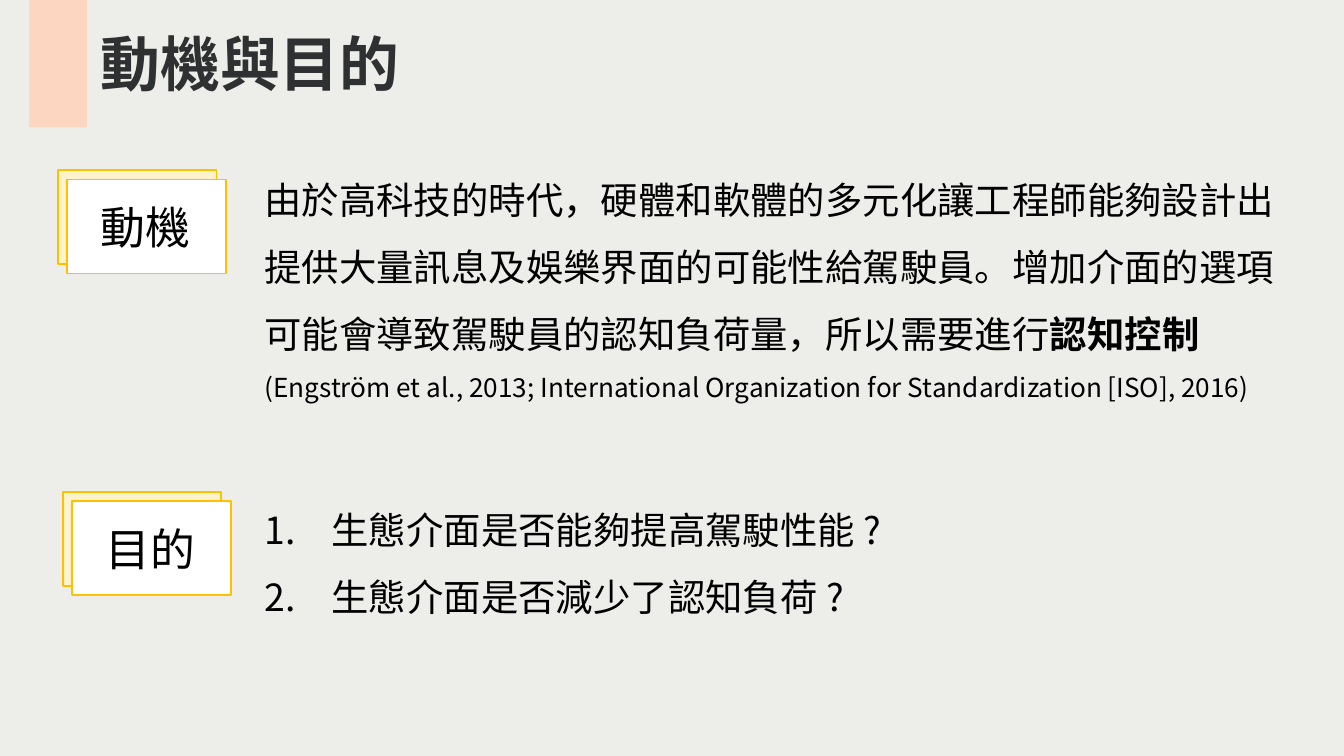
from dataclasses import dataclass

from lxml import etree
from pptx import Presentation
from pptx.dml.color import RGBColor
from pptx.enum import shapes, text
from pptx.oxml import ns
from pptx.util import Pt

FONT = "Noto Sans CJK SC"
COLORS = {
    "background": "EDEEE9",
    "accent": "FCD6C1",
    "title": "2E3032",
    "body": "000000",
    "card_back": "FFF2CC",
    "card_front": "FFFFFF",
    "card_line": "FFC000",
}


@dataclass(frozen=True)
class Box:
    left: float
    top: float
    width: float
    height: float


@dataclass(frozen=True)
class Run:
    words: str
    size: float
    bold: bool = False
    color: str = "body"


@dataclass(frozen=True)
class Tag:
    words: str
    left: float
    top: float


def rgb(color: str) -> RGBColor:
    return RGBColor.from_string(COLORS[color])


def add_panel(parent, box: Box, fill: str, line: str | None = None) -> None:
    panel = parent.add_shape(
        shapes.MSO_SHAPE.RECTANGLE,
        Pt(box.left), Pt(box.top), Pt(box.width), Pt(box.height),
    )
    panel.shadow.inherit = False
    panel.fill.solid()
    panel.fill.fore_color.rgb = rgb(fill)
    if line:
        panel.line.color.rgb = rgb(line)
        panel.line.width = Pt(1)
    else:
        panel.line.fill.background()


def add_words(
    parent,
    box: Box,
    paragraphs: list[list[Run]],
    wrap: bool = False,
    spacing: float | None = None,
    numbered: bool = False,
) -> None:
    frame = parent.add_textbox(
        Pt(box.left), Pt(box.top), Pt(box.width), Pt(box.height)
    ).text_frame
    frame.word_wrap = wrap
    frame.auto_size = text.MSO_AUTO_SIZE.SHAPE_TO_FIT_TEXT
    for index, runs in enumerate(paragraphs):
        paragraph = frame.add_paragraph() if index else frame.paragraphs[0]
        if spacing:
            paragraph.line_spacing = spacing
        if numbered:
            number_paragraph(paragraph, Pt(36))
        for part in runs:
            run = paragraph.add_run()
            run.text = part.words
            run.font.size = Pt(part.size)
            run.font.bold = part.bold
            run.font.color.rgb = rgb(part.color)
            run.font.name = FONT
            east_asian = etree.SubElement(run.font._element, ns.qn("a:ea"))
            east_asian.set("typeface", FONT)


def number_paragraph(paragraph, indent: int) -> None:
    properties = paragraph._p.get_or_add_pPr()
    properties.set("marL", str(indent))
    properties.set("indent", str(-indent))
    bullet_font = etree.SubElement(properties, ns.qn("a:buFont"))
    bullet_font.set("typeface", FONT)
    numbering = etree.SubElement(properties, ns.qn("a:buAutoNum"))
    numbering.set("type", "arabicPeriod")


def add_tag(slide, tag: Tag) -> None:
    members = slide.shapes.add_group_shape().shapes
    for offset, fill in ((0, "card_back"), (5, "card_front")):
        card = Box(tag.left + offset, tag.top + offset, 85, 50.4)
        add_panel(members, card, fill, "card_line")
    label = Box(tag.left + 15.8, tag.top + 12.3, 63.4, 36)
    add_words(members, label, [[Run(tag.words, 24)]])


def main() -> None:
    deck = Presentation()
    deck.slide_width, deck.slide_height = Pt(720), Pt(405)
    slide = deck.slides.add_slide(deck.slide_layouts[6])
    slide.background.fill.solid()
    slide.background.fill.fore_color.rgb = rgb("background")

    add_panel(slide.shapes, Box(15.6, 0, 31, 68.2), "accent")
    add_words(
        slide.shapes, Box(46.8, 10.8, 176.4, 46),
        [[Run("動機與目的", 32, True, "title")]],
    )

    for tag in (Tag("動機", 31, 91.2), Tag("目的", 33.6, 263.6)):
        add_tag(slide, tag)

    motive = [
        Run(
            "由於高科技的時代，硬體和軟體的多元化讓工程師能夠設計出"
            "提供大量訊息及娛樂界面的可能性給駕駛員。增加介面的選項"
            "可能會導致駕駛員的認知負荷量，所以需要進行", 20,
        ),
        Run("認知控制 ", 20, True),
        Run(
            "(Engström et al., 2013; International Organization for "
            "Standardization [ISO], 2016)", 14,
        ),
    ]
    add_words(
        slide.shapes, Box(134.6, 79.2, 573.8, 139), [motive],
        wrap=True, spacing=1.5,
    )

    questions = ("生態介面是否能夠提高駕駛性能 ?", "生態介面是否減少了認知負荷 ?")
    add_words(
        slide.shapes, Box(134.6, 256.3, 348.5, 75.6),
        [[Run(question, 20)] for question in questions],
        spacing=1.5, numbered=True,
    )
    deck.save("out.pptx")


if __name__ == "__main__":
    main()
